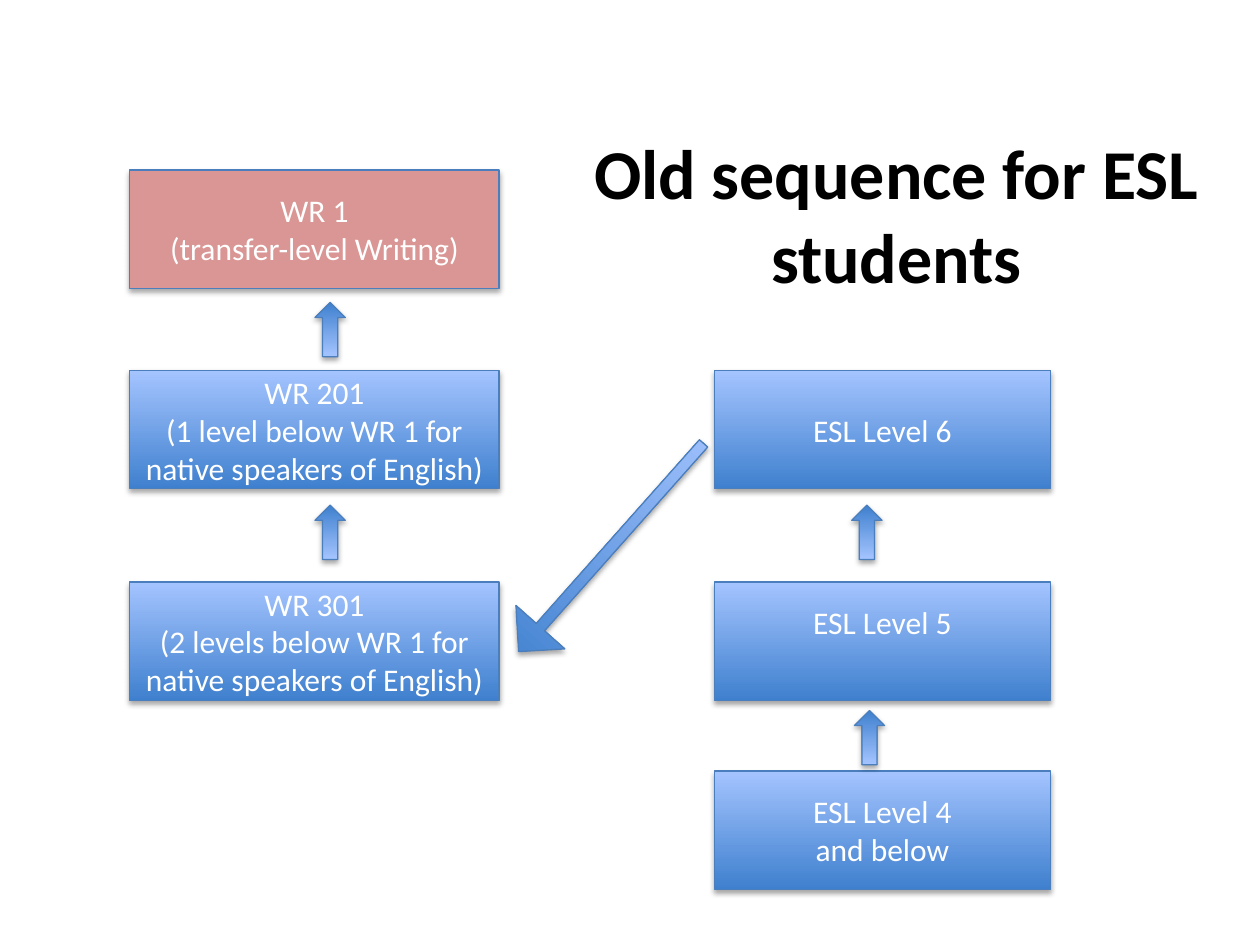
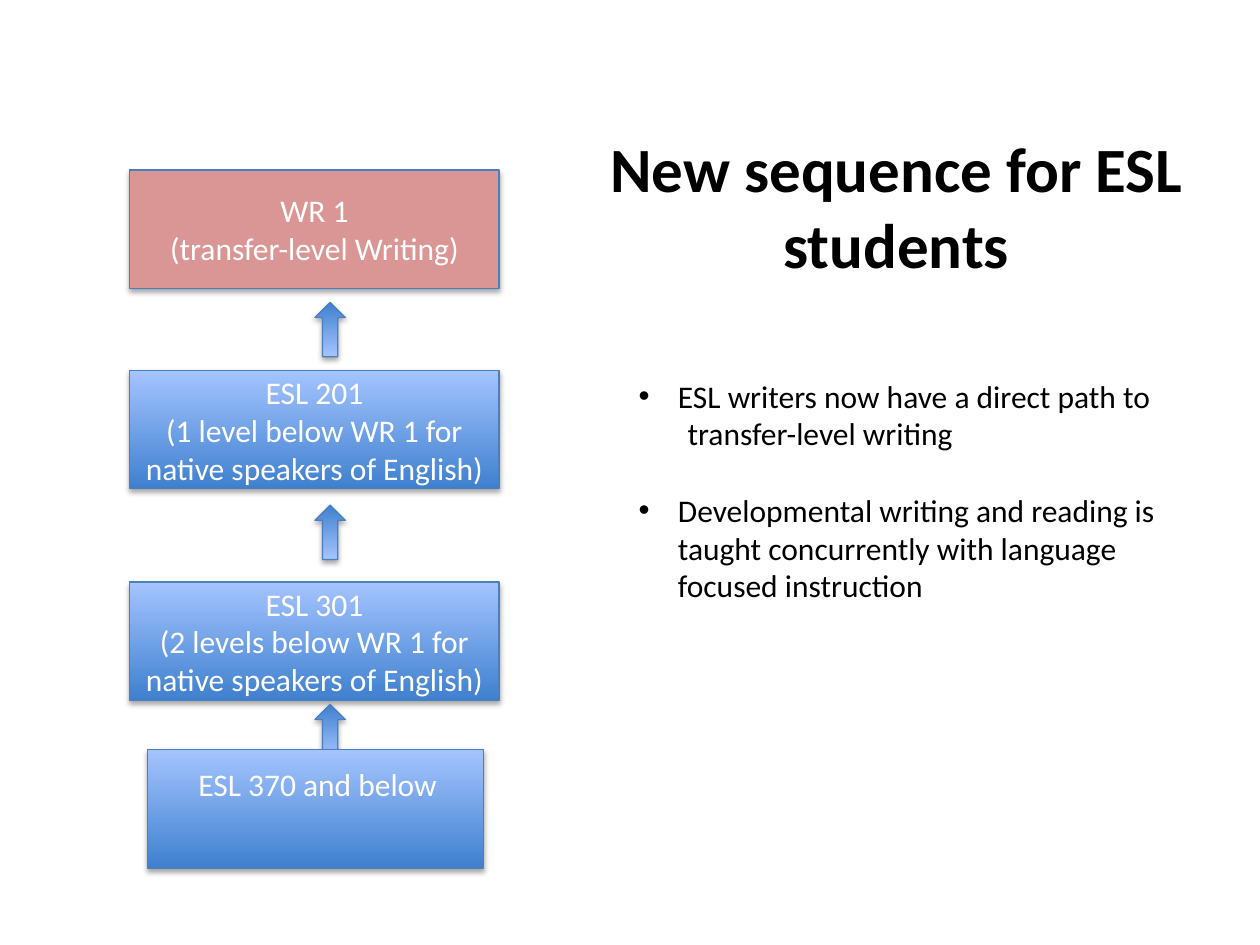
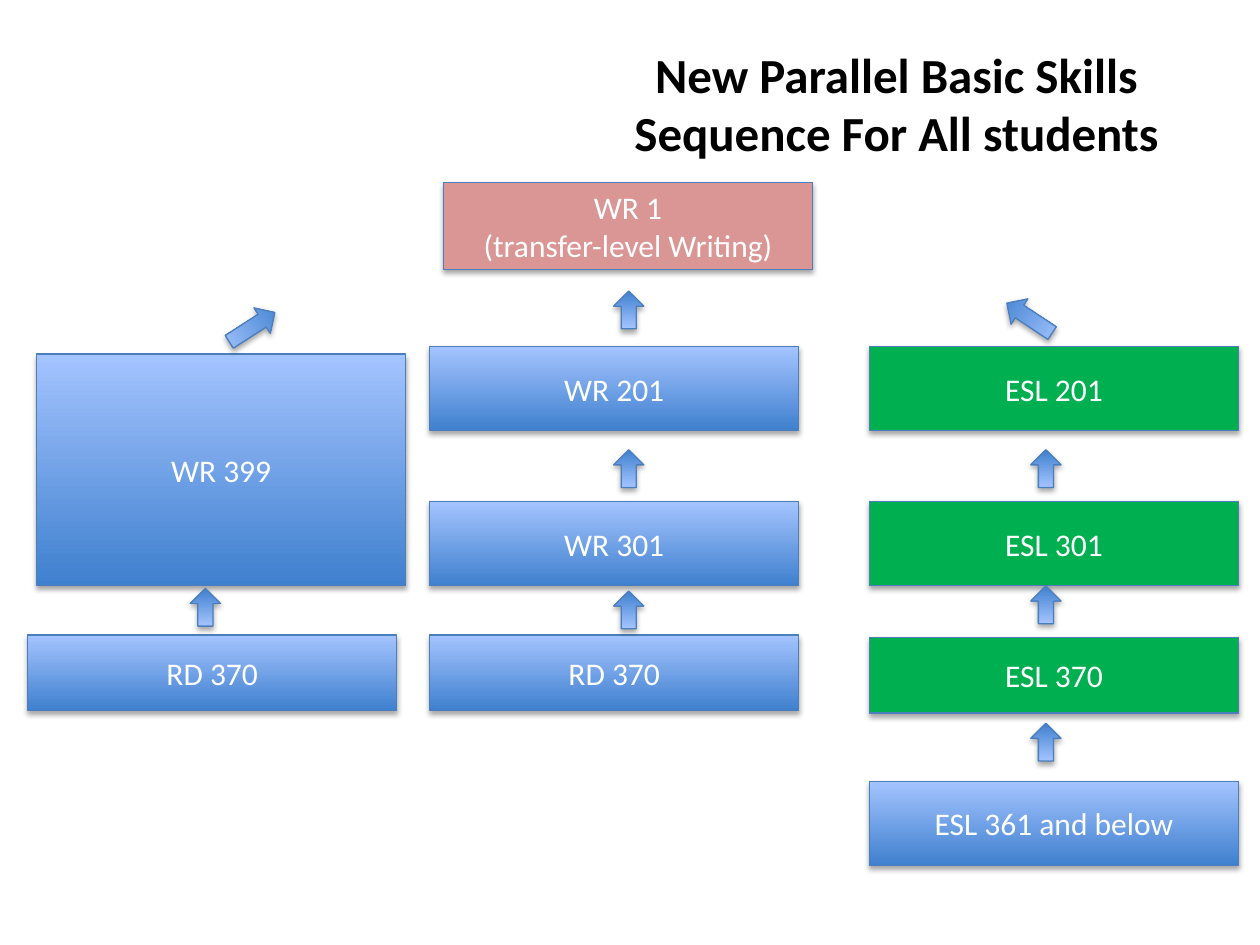
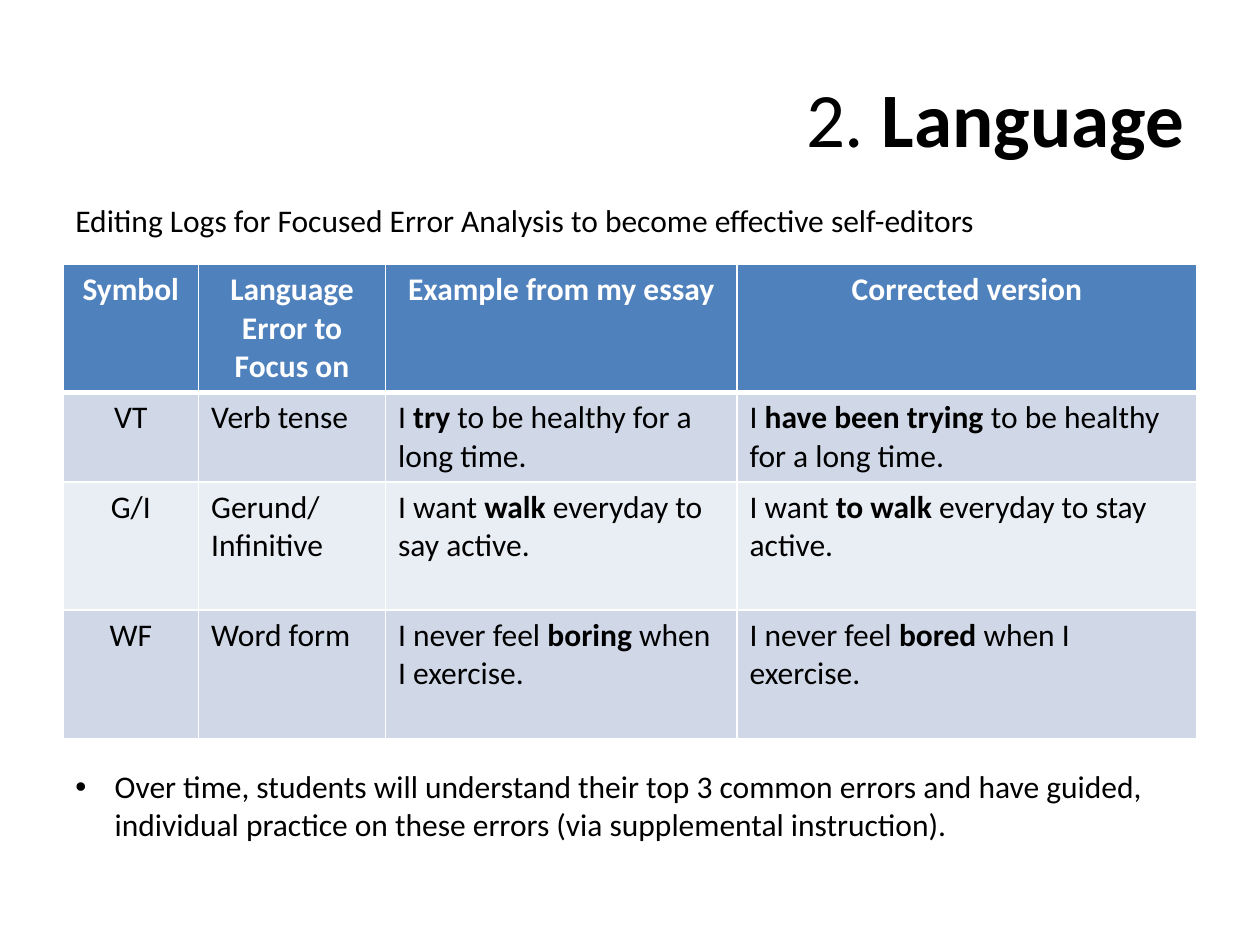
from lxml import etree
from pptx import Presentation
from pptx.dml.color import RGBColor
from pptx.enum.shapes import MSO_SHAPE as Kind
from pptx.enum.text import MSO_ANCHOR as Anchor, MSO_AUTO_SIZE as Fit, PP_ALIGN as Align
from pptx.oxml.ns import qn
from pptx.util import Pt

FONT = "Calibri"
BLACK, WHITE = "000000", "FFFFFF"
DEEP, PALE, EDGE = "3F80CE", "A4C4FF", "4B7EBC"
ROSE, GREEN = "D99694", "00B050"
HEAD, BANDS = "4F81BD", ("D0D8E8", "E9EDF4")
WIDE, SLIM, TALL = 211, 192.2, 67.7
LEFT, RIGHT = 74.2, 408.2
ROWS = (97.2, 211.7, 332.6, 440.6)
GOAL = ["WR 1", "(transfer-level Writing)"]


def color(code):
    """Turn a hex string into a colour."""
    return RGBColor.from_string(code)


def sub(parent, tag, **attrs):
    """Add a drawing element with attributes."""
    return etree.SubElement(parent, qn(tag), attrs)


def write(frame, lines, size=18, ink=BLACK, bold=False, align=Align.LEFT, anchor=Anchor.TOP):
    """Fill a frame with lines; stars switch the weight."""
    frame.word_wrap = True
    frame.auto_size = Fit.NONE
    frame.vertical_anchor = anchor
    for row, line in enumerate(lines):
        par = frame.add_paragraph() if row else frame.paragraphs[0]
        par.alignment = align
        for turn, part in enumerate(line.split("*")):
            if part:
                run = par.add_run()
                run.text = part
                font = run.font
                font.name, font.size = FONT, Pt(size)
                font.bold = bold != bool(turn % 2)
                font.color.rgb = color(ink)


def indent(par, left, bullet=True):
    """Indent a paragraph and hang a bullet in front of it."""
    props = par._p.get_or_add_pPr()
    props.set("marL", str(Pt(left)))
    props.set("indent", str(Pt(-left if bullet else 0)))
    if bullet:
        sub(props, "a:buFont", typeface="Arial")
        sub(props, "a:buChar", char="•")


def title(slide, lines, place, **form):
    """Place and fill the slide title."""
    shape = slide.shapes.title
    shape.left, shape.top, shape.width, shape.height = map(Pt, place)
    write(shape.text_frame, lines, **form)


def note(slide, lines, place, **form):
    """Add a text box and return its frame."""
    frame = slide.shapes.add_textbox(*map(Pt, place)).text_frame
    write(frame, lines, **form)
    return frame


def solid(slide, kind, place, fill=None):
    """Add a shape with the shared edge, shade and shadow."""
    shape = slide.shapes.add_shape(kind, *map(Pt, place))
    if fill:
        shape.fill.solid()
        shape.fill.fore_color.rgb = color(fill)
    else:
        shape.fill.gradient()
        shape.fill.gradient_angle = 90
        for stop, code in zip(shape.fill.gradient_stops, (DEEP, PALE)):
            stop.color.rgb = color(code)
    shape.line.color.rgb = color(EDGE)
    shape.line.width = Pt(0.75)
    shape.shadow.inherit = False
    glow = sub(shape._element.spPr.find(qn("a:effectLst")), "a:outerShdw",
               blurRad=str(Pt(3.1)), dist=str(Pt(1.8)), dir="5400000", rotWithShape="0")
    sub(sub(glow, "a:srgbClr", val=BLACK), "a:alpha", val="35000")
    return shape


def box(slide, lines, x, y, wide=WIDE, tall=TALL, fill=None):
    """Add a course box and return its frame."""
    frame = solid(slide, Kind.RECTANGLE, (x, y, wide, tall), fill).text_frame
    write(frame, lines, ink=WHITE, align=Align.CENTER, anchor=Anchor.MIDDLE)
    return frame


def arrow(slide, x, y, tall=31, wide=17.3, turn=180):
    """Add a block arrow, pointing up unless turned."""
    shape = solid(slide, Kind.DOWN_ARROW, (x, y, wide, tall))
    shape.rotation = turn
    return shape


def stair(slide, code):
    """Add the left column of three courses."""
    box(slide, GOAL, LEFT, ROWS[0], fill=ROSE)
    for step, y in enumerate(ROWS[1:3], 1):
        plural = "s" if step > 1 else ""
        text = f"({step} level{plural} below WR 1 for native speakers of English)"
        box(slide, [f"{code} {step + 1}01", text], LEFT, y)
    for y in (172.8, 288.7):
        arrow(slide, 180, y)


def old(slide):
    """Build the old sequence."""
    title(slide, ["Old sequence for ESL students"], (331.9, 70.6, 360.7, 104.4),
          size=40, bold=True, align=Align.CENTER)
    stair(slide, "WR")
    box(slide, ["ESL Level 6"], RIGHT, ROWS[1], SLIM)
    box(slide, ["ESL Level 5"], RIGHT, ROWS[2], SLIM).margin_bottom = Pt(25.2)
    box(slide, ["ESL Level 4", "and below"], RIGHT, ROWS[3], SLIM)
    arrow(slide, 486.7, 288.7)
    arrow(slide, 488.2, 406)
    link = arrow(slide, 330.5, 233.3, 159.1, 37.4, 41.6)
    link.adjustments[0] = 0.17


def new(slide):
    """Build the new sequence."""
    title(slide, ["New sequence for ESL students"], (331.9, 70.6, 360.7, 94.3),
          size=36, bold=True, align=Align.CENTER)
    stair(slide, "ESL")
    arrow(slide, 180, 402.5)
    solid(slide, Kind.RECTANGLE, (84.2, 428.4, SLIM, TALL))
    note(slide, ["ESL 370 and below"], (103, 433.4, 157, 28.8), ink=WHITE, align=Align.CENTER)
    frame = note(slide, [
        "ESL writers now have a direct path to",
        "transfer-level writing",
        "Developmental writing and reading is taught concurrently with language focused instruction",
    ], (357.8, 211.7, 334.8, 138.2))
    first, tail, last = frame.paragraphs
    indent(first, 22.5)
    indent(tail, 28, bullet=False)
    indent(last, 22.5)
    last.space_before = Pt(22)


def skills(slide):
    """Build the parallel sequence."""
    title(slide, ["New Parallel Basic Skills", "Sequence For All students"],
          (331.9, 21.6, 360.7, 74.9), size=28, bold=True, align=Align.CENTER)
    mid, far = 245.5, 496.8
    for text, x, y, tall, fill in (
        ("WR 201", mid, 198, 48.2, None),
        ("WR 301", mid, 286.6, 48.2, None),
        ("RD 370", mid, 362.9, 43.2, None),
        ("ESL 201", far, 198, 48.2, GREEN),
        ("ESL 301", far, 286.6, 48.2, GREEN),
        ("ESL 370", far, 364.3, 43.2, GREEN),
        ("ESL 361 and below", far, 446.4, 48.2, None),
        ("WR 399", 20.9, 202.3, 132.5, None),
        ("RD 370", 15.8, 362.9, 43.2, None),
    ):
        box(slide, [text], x, y, tall=tall, fill=fill)
    box(slide, GOAL, 253.4, 104.4, tall=49.7, fill=ROSE)
    for x, tops in ((108.7, (336.2,)), (350.6, (166.3, 257, 337.7)), (589, (257, 334.8, 413.3))):
        for y in tops:
            arrow(slide, x, y, 21.6)
    arrow(slide, 135.4, 171.4, turn=237.3)
    arrow(slide, 579.6, 166.3, turn=123.5)


def border(cell, row):
    """Draw the white borders of a cell."""
    props = cell._tc.get_or_add_tcPr()
    for spot, side in enumerate("LRTB"):
        thick = (side, row) in (("B", 0), ("T", 1))
        line = sub(props, f"a:ln{side}", w=str(Pt(3 if thick else 1)))
        sub(sub(line, "a:solidFill"), "a:srgbClr", val=WHITE)
        props.insert(spot, line)


def grid(slide, data, place, cols, rows):
    """Add a banded table with a header row."""
    table = slide.shapes.add_table(len(rows), len(cols), *map(Pt, place)).table
    for col, wide in zip(table.columns, cols):
        col.width = Pt(wide)
    for r, (line, tall) in enumerate(zip(data, rows)):
        table.rows[r].height = Pt(tall)
        for c, text in enumerate(line):
            cell = table.cell(r, c)
            cell.fill.solid()
            cell.fill.fore_color.rgb = color(BANDS[(r - 1) % 2] if r else HEAD)
            border(cell, r)
            write(cell.text_frame, [text], ink=BLACK if r else WHITE, bold=not r,
                  align=Align.LEFT if r and c else Align.CENTER)


def logs(slide):
    """Build the editing log."""
    title(slide, ["2. *Language*"], (36, 21.6, 648, 90), size=44,
          align=Align.RIGHT, anchor=Anchor.MIDDLE)
    grid(slide, [
        ("Symbol", "Language Error to Focus on", "Example from my essay", "Corrected version"),
        ("VT", "Verb tense", "I *try* to be healthy for a long time.",
         "I *have been trying* to be healthy for a long time."),
        ("G/I", "Gerund/Infinitive", "I want *walk* everyday to say active.",
         "I want *to walk* everyday to stay active."),
        ("WF", "Word form", "I never feel *boring* when I exercise.",
         "I never feel *bored* when I exercise."),
    ], (36, 151.2, 648, 270), (77.5, 106.8, 200.9, 262.8), (72.5, 51, 73.2, 73.2))
    note(slide, ["Editing Logs for Focused Error Analysis to become effective self-editors"],
         (36, 111.6, 648, 28.8))
    frame = note(slide, ["Over time, students will understand their top 3 common errors and have "
                         "guided, individual practice on these errors (via supplemental "
                         "instruction)."], (36, 434.9, 633.6, 51))
    indent(frame.paragraphs[0], 22.5)


def main():
    """Build and save the deck."""
    deck = Presentation()
    deck.slide_width, deck.slide_height = Pt(720), Pt(540)
    for build in (old, new, skills, logs):
        build(deck.slides.add_slide(deck.slide_layouts[5]))
    deck.save("out.pptx")


if __name__ == "__main__":
    main()
